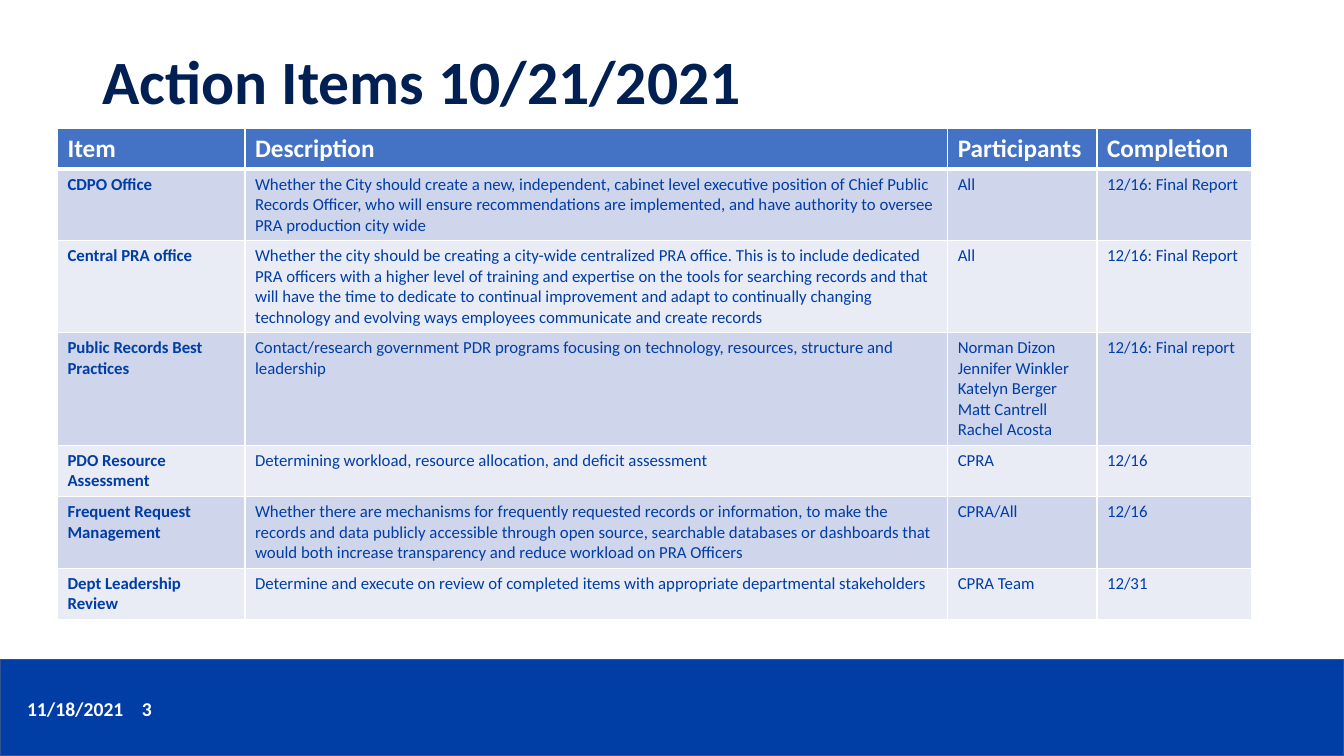
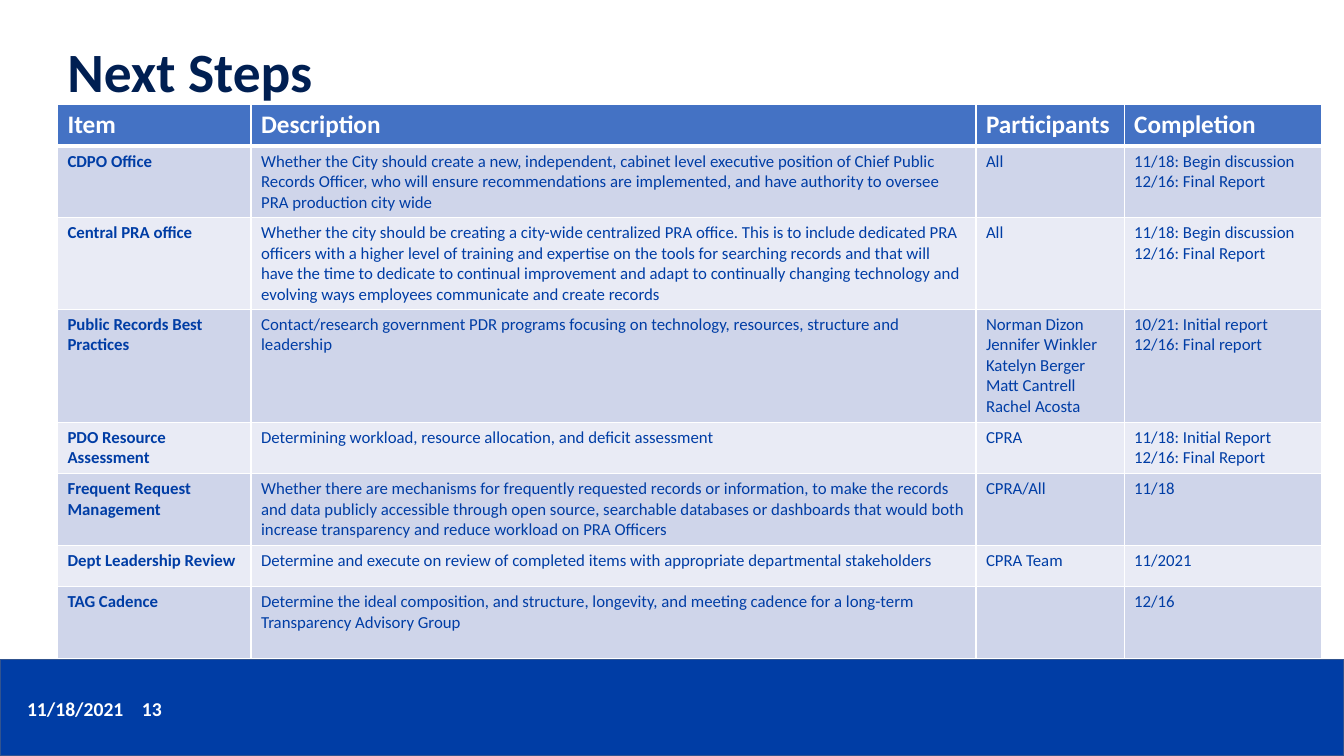
from dataclasses import dataclass

from lxml.etree import SubElement
from pptx import Presentation
from pptx.dml.color import RGBColor
from pptx.enum.shapes import MSO_SHAPE
from pptx.enum.text import MSO_ANCHOR
from pptx.oxml.ns import qn
from pptx.slide import Slide
from pptx.table import _Cell
from pptx.text.text import TextFrame
from pptx.util import Inches, Pt


@dataclass(frozen=True)
class Theme:
    font: str = "Calibri"
    navy: str = "001F52"
    blue: str = "003DA5"
    band_edge: str = "31538F"
    header_fill: str = "4472C4"
    row_fills: tuple[str, str] = ("CFD5EA", "E9EBF5")
    white: str = "FFFFFF"
    header_size: float = 18
    body_size: float = 12
    footer_size: float = 14
    rule: float = 1
    header_rule: float = 3


@dataclass(frozen=True)
class Task:
    item: str
    description: str
    participants: str
    height: float


@dataclass(frozen=True)
class Deadline:
    task: Task
    completion: str
    height: float | None = None


@dataclass(frozen=True)
class ActionPage:
    title: str
    title_box: tuple[float, float, float, float]
    title_size: float
    number: str
    table_top: float
    columns: tuple[float, ...]
    deadlines: tuple[Deadline, ...]


THEME = Theme()
HEADINGS = ("Item", "Description", "Participants", "Completion")
TABLE_LEFT = 0.57
HEADER_HEIGHT = 0.41

# Tasks that both pages report on
CDPO = Task(
    "CDPO Office",
    "Whether the City should create a new, independent, cabinet level executive position of "
    "Chief Public Records Officer, who will ensure recommendations are implemented, and have "
    "authority to oversee PRA production city wide",
    "All", 0.71)
CENTRAL = Task(
    "Central PRA office",
    "Whether the city should be creating a city-wide centralized PRA office. This is to include "
    "dedicated PRA officers with a higher level of training and expertise on the tools for "
    "searching records and that will have the time to dedicate to continual improvement and "
    "adapt to continually changing technology and evolving ways employees communicate and "
    "create records",
    "All", 0.91)
PRACTICES = Task(
    "Public Records Best Practices",
    "Contact/research government PDR programs focusing on technology, resources, structure "
    "and leadership",
    "Norman Dizon\nJennifer Winkler\nKatelyn Berger\nMatt Cantrell\nRachel Acosta", 1.12)
RESOURCES = Task(
    "PDO Resource Assessment",
    "Determining workload, resource allocation, and deficit assessment",
    "CPRA", 0.51)
REQUESTS = Task(
    "Frequent Request Management",
    "Whether there are mechanisms for frequently requested records or information, to make the "
    "records and data publicly accessible through open source, searchable databases or "
    "dashboards that would both increase transparency and reduce workload on PRA Officers",
    "CPRA/All", 0.71)
LEADERSHIP = Task(
    "Dept Leadership Review",
    "Determine and execute on review of completed items with appropriate departmental "
    "stakeholders",
    "CPRA Team", 0.51)
CADENCE = Task(
    "TAG Cadence",
    "Determine the ideal composition, and structure, longevity, and meeting cadence for a "
    "long-term Transparency Advisory Group",
    "", 0.71)

PAGES = (
    ActionPage(
        "Action Items 10/21/2021", (0.92, 0.4, 11.5, 0.87), 44, "3",
        1.27, (1.86, 6.97, 1.48, 1.53),
        (
            Deadline(CDPO, "12/16: Final Report"),
            Deadline(CENTRAL, "12/16: Final Report"),
            Deadline(PRACTICES, "12/16: Final report"),
            Deadline(RESOURCES, "12/16"),
            Deadline(REQUESTS, "12/16"),
            Deadline(LEADERSHIP, "12/31"),
        )),
    ActionPage(
        "Next Steps", (0.57, 0.4, 11.5, 0.67), 39.6, "13",
        1.04, (1.92, 7.19, 1.47, 1.96),
        (
            Deadline(CDPO, "11/18: Begin discussion\n12/16: Final Report"),
            Deadline(CENTRAL, "11/18: Begin discussion\n12/16: Final Report"),
            Deadline(PRACTICES, "10/21: Initial report\n12/16: Final report"),
            Deadline(RESOURCES, "11/18: Initial Report\n12/16: Final Report"),
            Deadline(REQUESTS, "11/18"),
            Deadline(LEADERSHIP, "11/2021", 0.41),
            Deadline(CADENCE, "12/16"),
        )),
)


def write(frame: TextFrame, text: str, size: float, color: str, bold: bool) -> None:
    frame.text = text
    for paragraph in frame.paragraphs:
        font = paragraph.font
        for target in (font, *(run.font for run in paragraph.runs)):
            target.name = THEME.font
            target.size = Pt(size)
            target.bold = bold
            target.color.rgb = RGBColor.from_string(color)


def add_label(slide: Slide, box: tuple[float, float, float, float], text: str,
              size: float, color: str) -> TextFrame:
    frame = slide.shapes.add_textbox(*map(Inches, box)).text_frame
    frame.word_wrap = True
    frame.vertical_anchor = MSO_ANCHOR.MIDDLE
    write(frame, text, size, color, True)
    return frame


def add_footer(slide: Slide, number: str) -> None:
    band = slide.shapes.add_shape(
        MSO_SHAPE.RECTANGLE, Inches(0), Inches(6.54), Inches(13.33), Inches(0.96))
    band.shadow.inherit = False
    band.fill.solid()
    band.fill.fore_color.rgb = RGBColor.from_string(THEME.blue)
    band.line.color.rgb = RGBColor.from_string(THEME.band_edge)
    band.line.width = Pt(1)
    add_label(slide, (0.17, 6.83, 1.67, 0.4), "11/18/2021", THEME.footer_size, THEME.white)
    add_label(slide, (1.31, 6.86, 0.74, 0.34), number, THEME.footer_size, THEME.white)


def set_borders(cell: _Cell, top: float, bottom: float) -> None:
    properties = cell._tc.get_or_add_tcPr()
    widths = {"a:lnL": THEME.rule, "a:lnR": THEME.rule, "a:lnT": top, "a:lnB": bottom}
    for side, width in widths.items():
        line = SubElement(properties, qn(side), w=str(Pt(width)))
        SubElement(SubElement(line, qn("a:solidFill")), qn("a:srgbClr"), val=THEME.white)


def add_action_table(slide: Slide, page: ActionPage) -> None:
    rows = [HEADINGS] + [
        (entry.task.item, entry.task.description, entry.task.participants, entry.completion)
        for entry in page.deadlines]
    heights = [HEADER_HEIGHT] + [entry.height or entry.task.height for entry in page.deadlines]
    table = slide.shapes.add_table(
        len(rows), len(HEADINGS), Inches(TABLE_LEFT), Inches(page.table_top),
        Inches(sum(page.columns)), Inches(sum(heights))).table
    for column, width in zip(table.columns, page.columns):
        column.width = Inches(width)
    for row_index, (texts, height) in enumerate(zip(rows, heights)):
        table.rows[row_index].height = Inches(height)
        is_header = row_index == 0
        fill = THEME.header_fill if is_header else THEME.row_fills[(row_index - 1) % 2]
        size = THEME.header_size if is_header else THEME.body_size
        color = THEME.white if is_header else THEME.blue
        top = THEME.header_rule if row_index == 1 else THEME.rule
        bottom = THEME.header_rule if is_header else THEME.rule
        for column_index, text in enumerate(texts):
            cell = table.cell(row_index, column_index)
            set_borders(cell, top, bottom)
            cell.fill.solid()
            cell.fill.fore_color.rgb = RGBColor.from_string(fill)
            write(cell.text_frame, text, size, color, is_header or column_index == 0)


def main() -> None:
    deck = Presentation()
    deck.slide_width, deck.slide_height = Inches(13.33), Inches(7.5)
    for page in PAGES:
        slide = deck.slides.add_slide(deck.slide_layouts[6])
        add_footer(slide, page.number)
        title = add_label(slide, page.title_box, page.title, page.title_size, THEME.navy)
        title.paragraphs[0].line_spacing = 0.9
        add_action_table(slide, page)
    deck.save("out.pptx")


if __name__ == "__main__":
    main()
